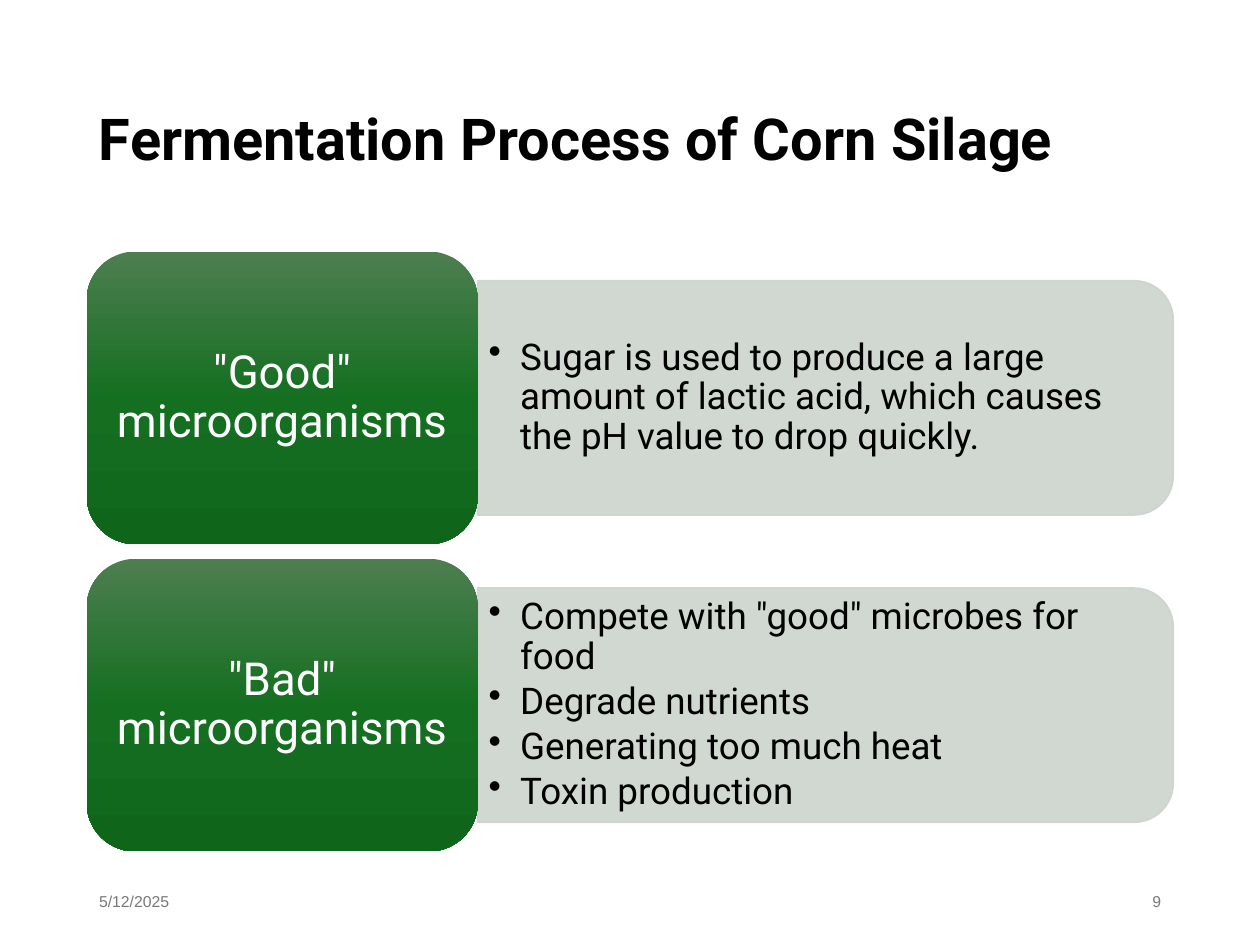
import copy
from dataclasses import dataclass

import pptx
import pptx.dml.color
import pptx.enum.shapes
import pptx.enum.text
import pptx.oxml
import pptx.oxml.ns
import pptx.util

Pt = pptx.util.Pt
RGB = pptx.dml.color.RGBColor.from_string
qn = pptx.oxml.ns.qn
SHAPES = pptx.enum.shapes.MSO_SHAPE
ALIGN = pptx.enum.text.PP_ALIGN
A_NS = 'xmlns:a="http://schemas.openxmlformats.org/drawingml/2006/main"'


@dataclass(frozen=True)
class Theme:
    font: str = "Roboto"
    footer_font: str = "Arial"
    ink: str = "000000"
    label_ink: str = "FFFFFF"
    footer_ink: str = "797979"
    band: str = "CCD4CD"
    greens: tuple = ((0, "4D7E50"), (0.5, "156F21"), (1, "0F661B"))
    title_size: int = 33
    label_size: int = 26
    bullet_size: int = 21
    footer_size: int = 9


theme = Theme()


def write(holder, lines, size, color, font=theme.font, align=ALIGN.LEFT, bold=False,
          insets=(7.2, 3.6), line_spacing=1.0, after=0, bulleted=False):
    """Fill a shape or text box with vertically centred paragraphs."""
    frame = holder.text_frame
    frame.word_wrap = True
    frame.vertical_anchor = pptx.enum.text.MSO_ANCHOR.MIDDLE
    frame.margin_left = frame.margin_right = Pt(insets[0])
    frame.margin_top = frame.margin_bottom = Pt(insets[1])
    for index, line in enumerate(lines):
        paragraph = frame.add_paragraph() if index else frame.paragraphs[0]
        paragraph.alignment = align
        paragraph.line_spacing = line_spacing
        paragraph.space_after = Pt(after)
        if bulleted:
            properties = paragraph._p.get_or_add_pPr()
            properties.set("marL", str(Pt(18)))
            properties.set("indent", str(Pt(-18)))
            properties.append(pptx.oxml.parse_xml(f'<a:buChar {A_NS} char="•"/>'))
        run = paragraph.add_run()
        run.text = line
        run.font.size = Pt(size)
        run.font.name = font
        run.font.bold = bold
        run.font.color.rgb = RGB(color)


presentation = pptx.Presentation()
presentation.slide_width, presentation.slide_height = Pt(720), Pt(540)
slide = presentation.slides.add_slide(presentation.slide_layouts[6])

title = slide.shapes.add_textbox(Pt(49.5), Pt(28.75), Pt(621), Pt(104.4))
write(title, ["Fermentation Process of Corn Silage"], theme.title_size, theme.ink,
      bold=True, line_spacing=0.9)

for left, footer_text, align in ((49.5, "5/12/2025", ALIGN.LEFT), (508.5, "9", ALIGN.RIGHT)):
    footer = slide.shapes.add_textbox(Pt(left), Pt(500.5), Pt(162), Pt(28.75))
    write(footer, [footer_text], theme.footer_size, theme.footer_ink, theme.footer_font,
          align, after=6)

groups = [
    ('"Good" microorganisms', [
        "Sugar is used to produce a large amount of lactic acid, "
        "which causes the pH value to drop quickly.",
    ]),
    ('"Bad" microorganisms', [
        'Compete with "good" microbes for food',
        "Degrade nutrients",
        "Generating too much heat",
        "Toxin production",
    ]),
]
label_left, label_width, label_height = 49.5, 223.5, 167.25
band_left, band_width, band_height = label_left + label_width, 397.4, 133.8
bullets_width, bullets_height = 391, 121
first_top, row_step = 143.75, 175.6

for row, (label_text, points) in enumerate(groups):
    top = first_top + row * row_step
    middle = top + label_height / 2

    # The band stands upright before its quarter turn, so its sides are swapped.
    band = slide.shapes.add_shape(
        SHAPES.ROUND_2_SAME_RECTANGLE,
        Pt(band_left + (band_width - band_height) / 2), Pt(middle - band_width / 2),
        Pt(band_height), Pt(band_width))
    band.rotation = 90
    band.shadow.inherit = False
    band.fill.solid()
    band.fill.fore_color.rgb = RGB(theme.band)
    band.line.color.rgb = RGB(theme.band)
    band.line.width = Pt(1)
    for color in band._element.spPr.iter(qn("a:srgbClr")):
        color.append(pptx.oxml.parse_xml(f'<a:alpha {A_NS} val="90000"/>'))

    bullets = slide.shapes.add_textbox(
        Pt(band_left), Pt(middle - bullets_height / 2), Pt(bullets_width), Pt(bullets_height))
    write(bullets, points, theme.bullet_size, theme.ink, insets=(6.3, 3.15),
          line_spacing=0.9, after=3.15, bulleted=True)

    label = slide.shapes.add_shape(
        SHAPES.ROUNDED_RECTANGLE, Pt(label_left), Pt(top), Pt(label_width), Pt(label_height))
    label.shadow.inherit = False
    label.line.fill.background()
    label.fill.gradient()
    label.fill.gradient_angle = 270
    stop_list = label._element.spPr.find(".//" + qn("a:gsLst"))
    stop_list.append(copy.deepcopy(stop_list[-1]))
    for stop, (position, green) in zip(label.fill.gradient_stops, theme.greens):
        stop.position = position
        stop.color.rgb = RGB(green)
    write(label, [label_text], theme.label_size, theme.label_ink, align=ALIGN.CENTER,
          insets=(7.8, 3.9), line_spacing=0.9, after=9.1)

presentation.save("out.pptx")
